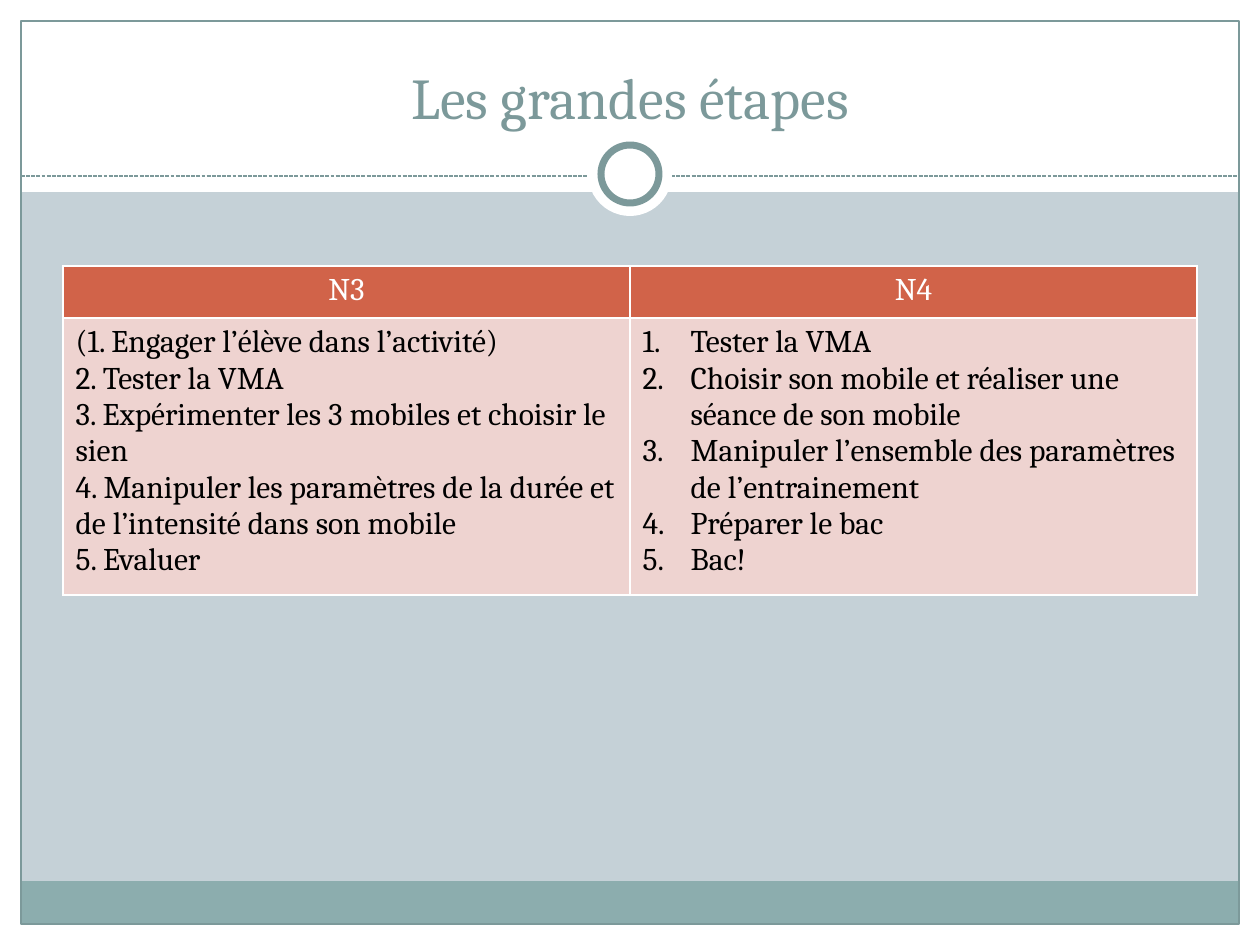
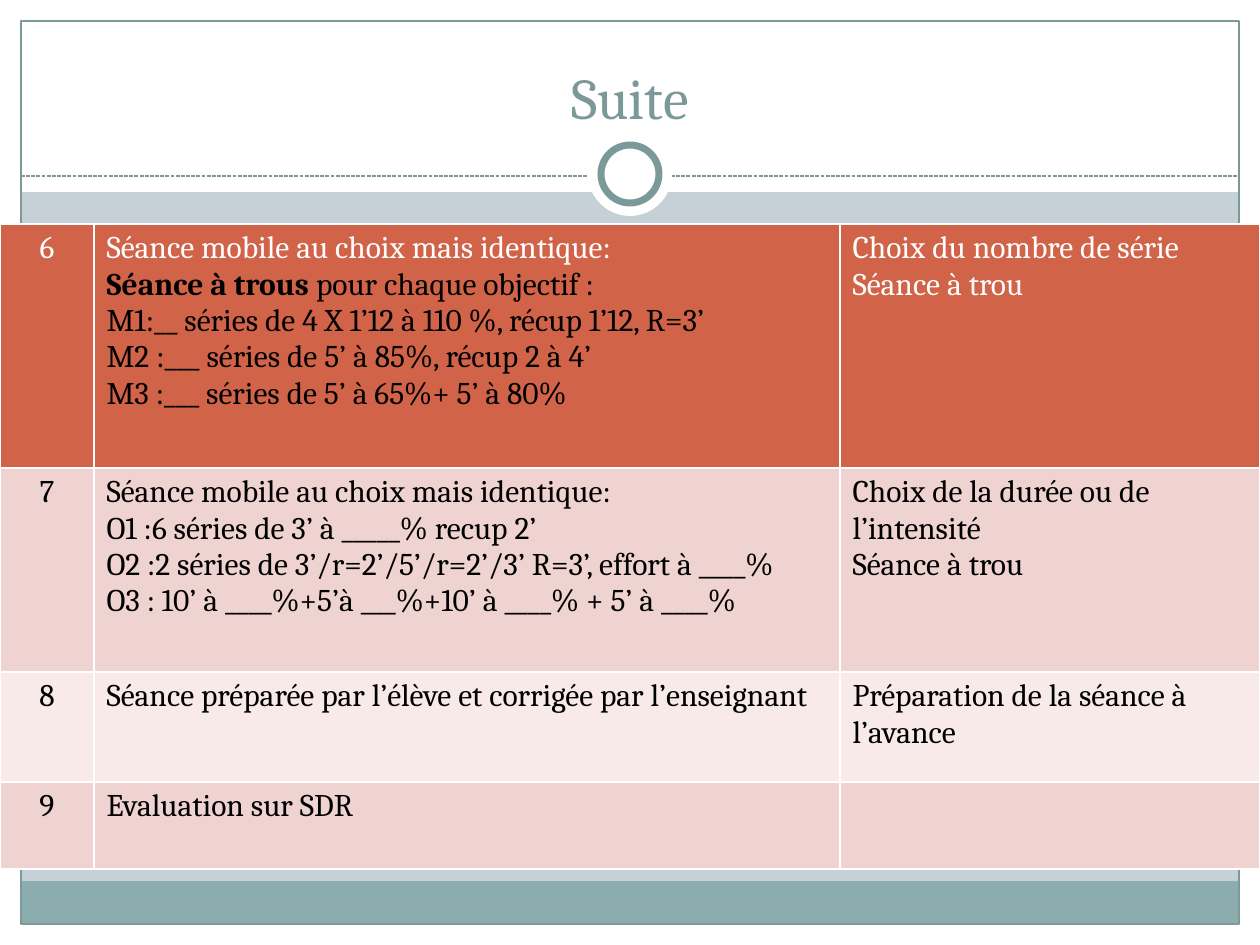
"""Build two slides on the main steps of a running cycle, each with a title and a table."""
from lxml import etree
from pptx import Presentation
from pptx.dml.color import RGBColor
from pptx.enum.dml import MSO_LINE
from pptx.enum.shapes import MSO_CONNECTOR, MSO_SHAPE
from pptx.enum.text import MSO_ANCHOR, PP_ALIGN
from pptx.oxml.ns import qn
from pptx.util import Pt

RECTANGLE, OVAL = MSO_SHAPE.RECTANGLE, MSO_SHAPE.OVAL
STRAIGHT = MSO_CONNECTOR.STRAIGHT
DASH = MSO_LINE.SQUARE_DOT
BOTTOM = MSO_ANCHOR.BOTTOM
LEFT, CENTER = PP_ALIGN.LEFT, PP_ALIGN.CENTER

WHITE = RGBColor(0xFF, 0xFF, 0xFF)
BLACK = RGBColor(0x00, 0x00, 0x00)
BACKGROUND = RGBColor(0xC5, 0xD1, 0xD7)
SLATE = RGBColor(0x7C, 0x99, 0x9A)
FOOTER = RGBColor(0x8C, 0xAD, 0xAE)
HEADER = RGBColor(0xD1, 0x63, 0x49)
ROSE = RGBColor(0xEE, 0xD3, 0xD0)
PALE_ROSE = RGBColor(0xF7, 0xEA, 0xE9)

FONT = "Cambria"
TITLE_SIZE, TABLE_SIZE = Pt(33), Pt(18)
WIDTH, HEIGHT = 1260, 945
MARGIN = 21
HEAD_HEIGHT = 192
FOOTER_HEIGHT = 43
DIVIDER_TOP = 176
RING_CENTER = (630, 174)
TITLE_BOX = (42, 32, 1176, 105)
NUMBER_INDENT = 48


def black(*runs):
    return [(text, BLACK, bold) for text, bold in runs]


STEPS = {
    "title": "Les grandes étapes",
    "table_at": (63, 266),
    "columns": (567, 567),
    "rows": (52, 52),
    "centered": {(0, 0), (0, 1)},
    "numbered": {(1, 1)},
    "cells": [
        [["N3"], ["N4"]],
        [
            [
                "(1. Engager l’élève dans l’activité)",
                "2. Tester la VMA",
                "3. Expérimenter les 3 mobiles et choisir le sien",
                "4. Manipuler les paramètres de la durée et de l’intensité dans son mobile",
                "5. Evaluer",
            ],
            [
                "Tester la VMA",
                "Choisir son mobile et réaliser une séance de son mobile",
                "Manipuler l’ensemble des paramètres de l’entrainement",
                "Préparer le bac",
                "Bac!",
            ],
        ],
    ],
}

SESSIONS = {
    "title": "Suite",
    "table_at": (0, 224),
    "columns": (94, 746, 420),
    "rows": (244, 204, 110, 87),
    "centered": {(row, 0) for row in range(4)},
    "numbered": set(),
    "cells": [
        [
            ["6"],
            [
                "Séance mobile au choix mais identique:",
                black(("Séance à trous", True), (" pour chaque objectif :", False)),
                black(("M1:__ séries de 4 X 1’12 à 110 %, récup 1’12, R=3’", False)),
                black(("M2 :___ séries de 5’ à 85%, récup 2 à 4’", False)),
                black(("M3 :___ séries de 5’ à 65%+ 5’ à 80%", False)),
            ],
            ["Choix du nombre de série", "Séance à trou"],
        ],
        [
            ["7"],
            [
                "Séance mobile au choix mais identique:",
                "O1 :6 séries de 3’ à _____% recup 2’",
                "O2 :2 séries de 3’/r=2’/5’/r=2’/3’ R=3’, effort à ____%",
                "O3 : 10’ à ____%+5’à ___%+10’ à ____% + 5’ à ____%",
            ],
            ["Choix de la durée ou de l’intensité", "Séance à trou"],
        ],
        [
            ["8"],
            ["Séance préparée par l’élève et corrigée par l’enseignant"],
            ["Préparation de la séance à l’avance"],
        ],
        [["9"], ["Evaluation sur SDR"], []],
    ],
}


def px(length):
    return round(length * 914400 / 126)


def add_run(paragraph, text, size, color, bold=False):
    run = paragraph.add_run()
    run.text = text
    run.font.name = FONT
    run.font.size = size
    run.font.bold = bold
    run.font.color.rgb = color


def add_panel(slide, kind, box, fill=None, line=None, line_width=0.75):
    shape = slide.shapes.add_shape(kind, *map(px, box))
    shape.shadow.inherit = False
    if fill is None:
        shape.fill.background()
    else:
        shape.fill.solid()
        shape.fill.fore_color.rgb = fill
    if line is None:
        shape.line.fill.background()
    else:
        shape.line.color.rgb = line
        shape.line.width = Pt(line_width)


def add_disc(slide, diameter, **style):
    left, top = (center - diameter / 2 for center in RING_CENTER)
    add_panel(slide, OVAL, (left, top, diameter, diameter), WHITE, **style)


def add_frame(slide):
    slide.background.fill.solid()
    slide.background.fill.fore_color.rgb = BACKGROUND
    right, bottom = WIDTH - MARGIN, HEIGHT - MARGIN
    inner_width = right - MARGIN
    for box in (
        (0, bottom, WIDTH, MARGIN),
        (0, 0, WIDTH, HEAD_HEIGHT),
        (0, 0, MARGIN, HEIGHT),
        (right, 0, MARGIN, HEIGHT),
    ):
        add_panel(slide, RECTANGLE, box, WHITE)
    footer_box = (MARGIN, bottom - FOOTER_HEIGHT, inner_width, FOOTER_HEIGHT)
    add_panel(slide, RECTANGLE, footer_box, FOOTER)
    add_panel(slide, RECTANGLE, (MARGIN, MARGIN, inner_width, bottom - MARGIN), line=SLATE)
    divider = slide.shapes.add_connector(
        STRAIGHT, px(MARGIN), px(DIVIDER_TOP), px(right), px(DIVIDER_TOP)
    )
    divider.line.color.rgb = SLATE
    divider.line.width = Pt(0.75)
    divider.line.dash_style = DASH
    etree.SubElement(divider._element.spPr, qn("a:effectLst"))
    add_disc(slide, 84)
    add_disc(slide, 58, line=SLATE, line_width=4)


def add_title(slide, text):
    frame = slide.shapes.add_textbox(*map(px, TITLE_BOX)).text_frame
    frame.word_wrap = True
    frame.vertical_anchor = BOTTOM
    paragraph = frame.paragraphs[0]
    paragraph.alignment = CENTER
    add_run(paragraph, text, TITLE_SIZE, SLATE)


def style_cell(cell, fill):
    properties = cell._tc.get_or_add_tcPr()
    for side in ("a:lnL", "a:lnR", "a:lnT", "a:lnB"):
        line = etree.SubElement(properties, qn(side), w=str(Pt(1)))
        solid = etree.SubElement(line, qn("a:solidFill"))
        etree.SubElement(solid, qn("a:srgbClr"), val=str(WHITE))
    cell.fill.solid()
    cell.fill.fore_color.rgb = fill


def number_paragraph(paragraph):
    properties = paragraph._p.get_or_add_pPr()
    properties.set("marL", str(px(NUMBER_INDENT)))
    properties.set("indent", str(-px(NUMBER_INDENT)))
    etree.SubElement(properties, qn("a:buFont"), typeface="+mj-lt")
    etree.SubElement(properties, qn("a:buAutoNum"), type="arabicPeriod")


def fill_cell(cell, lines, color, centered, numbered):
    for index, line in enumerate(lines):
        frame = cell.text_frame
        paragraph = frame.add_paragraph() if index else frame.paragraphs[0]
        paragraph.alignment = CENTER if centered else LEFT
        if numbered:
            number_paragraph(paragraph)
        runs = [(line, color, False)] if isinstance(line, str) else line
        for text, run_color, bold in runs:
            add_run(paragraph, text, TABLE_SIZE, run_color, bold)


def add_step_table(slide, content):
    columns, rows = content["columns"], content["rows"]
    box = (*content["table_at"], sum(columns), sum(rows))
    table = slide.shapes.add_table(len(rows), len(columns), *map(px, box)).table
    table.horz_banding = False
    for column, width in zip(table.columns, columns):
        column.width = px(width)
    for row_index, (height, cells) in enumerate(zip(rows, content["cells"])):
        table.rows[row_index].height = px(height)
        if row_index == 0:
            fill, color = HEADER, WHITE
        else:
            fill, color = (ROSE if row_index % 2 else PALE_ROSE), BLACK
        for column_index, lines in enumerate(cells):
            place = (row_index, column_index)
            cell = table.cell(*place)
            style_cell(cell, fill)
            fill_cell(
                cell, lines, color, place in content["centered"], place in content["numbered"]
            )


def main():
    presentation = Presentation()
    presentation.slide_width, presentation.slide_height = px(WIDTH), px(HEIGHT)
    for content in (STEPS, SESSIONS):
        slide = presentation.slides.add_slide(presentation.slide_layouts[6])
        add_frame(slide)
        add_title(slide, content["title"])
        add_step_table(slide, content)
    presentation.save("out.pptx")


if __name__ == "__main__":
    main()
